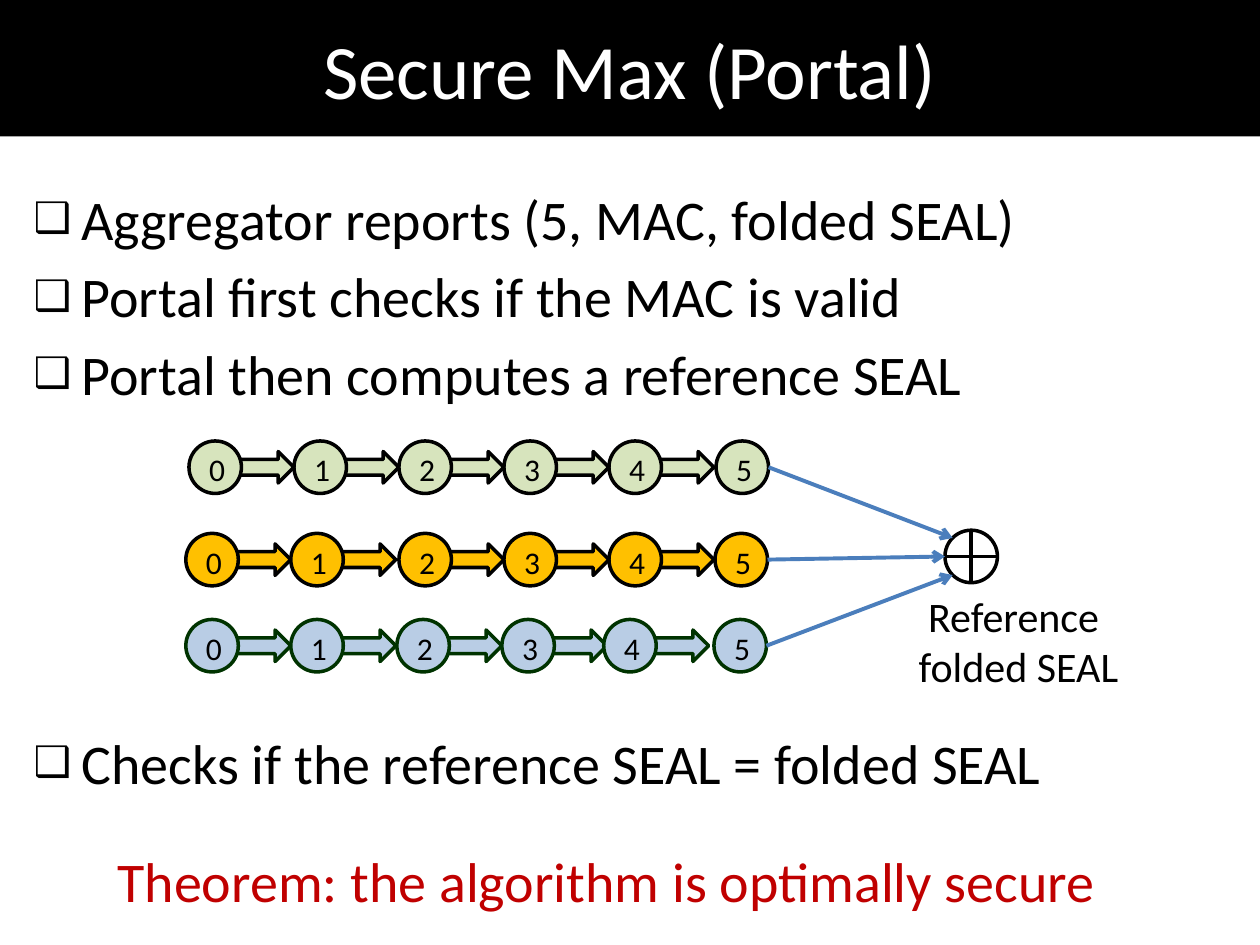
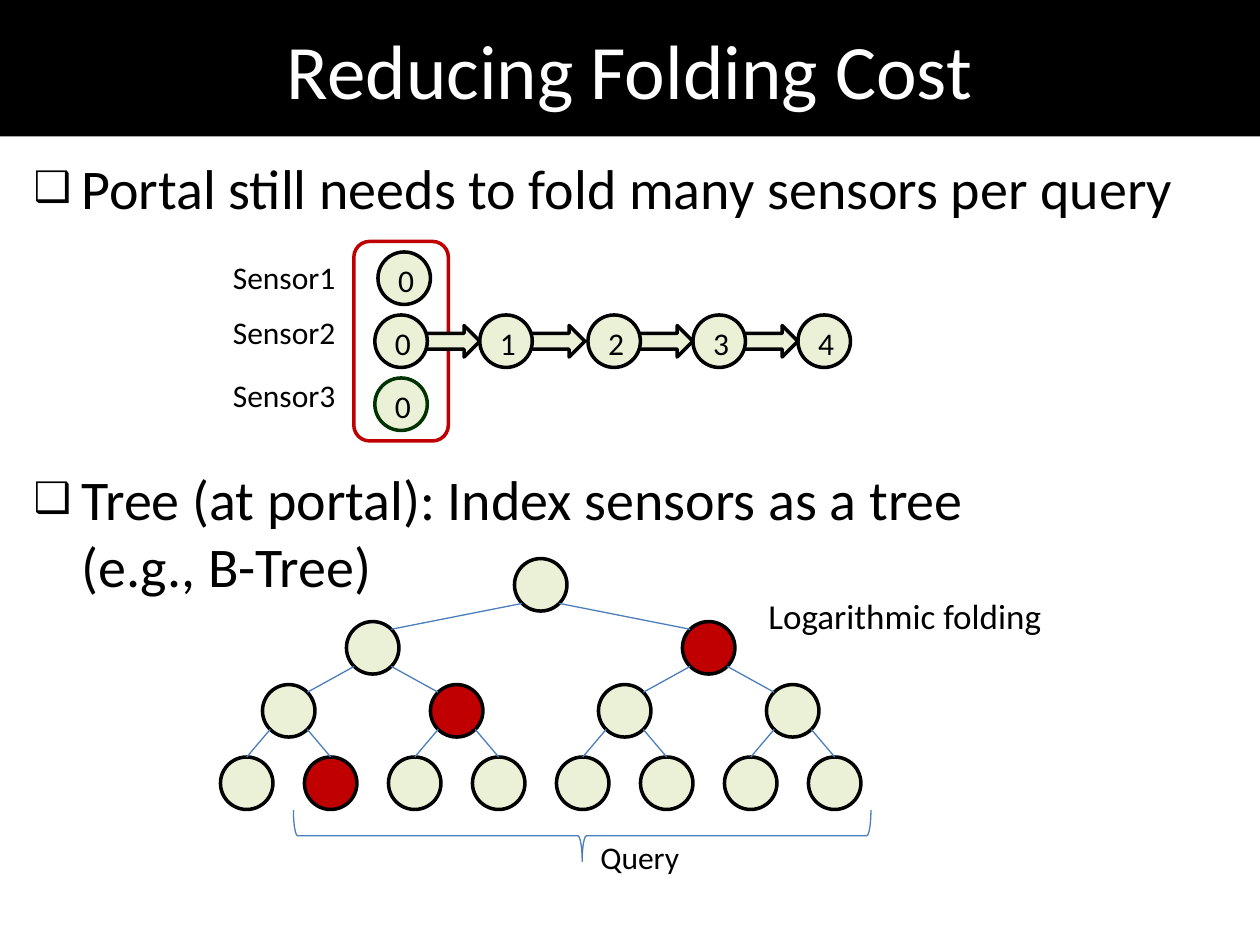
from dataclasses import dataclass
from math import cos, radians, sin

from lxml.etree import SubElement
from pptx import Presentation
from pptx.dml.color import RGBColor
from pptx.enum.shapes import MSO_CONNECTOR, MSO_SHAPE
from pptx.enum.text import MSO_ANCHOR, MSO_AUTO_SIZE, PP_ALIGN
from pptx.oxml.ns import qn
from pptx.util import Inches, Pt

FONT = "Calibri"
COLORS = {
    "black": "000000", "white": "FFFFFF", "red": "C00000", "green": "D7E4BD",
    "orange": "FFC000", "blue": "B9CDE5", "pale": "EAF1D7",
    "forest": "003300", "link": "4B7EBC",
}
COLS, ROWS = 120, 90
NODE = 5
GAP = 5.7
LEAVES_DEPTH = 3


@dataclass(frozen=True)
class Chain:
    """A row of numbered nodes joined by block arrows."""
    cols: tuple[float, ...]
    row: float
    fill: str
    line: str = "black"


@dataclass(frozen=True)
class Bullet:
    """A list item with the space above it in points."""
    text: str
    before: float = GAP


@dataclass(frozen=True)
class Label:
    """A free text with its cell, size and format."""
    text: str
    col: float
    row: float
    width: float
    height: float
    size: int = 18
    color: str = "black"
    align: PP_ALIGN = PP_ALIGN.LEFT


CHAINS = (
    Chain((18, 28, 38, 48, 58, 68.2), 42, "green"),
    Chain((17.7, 27.7, 38, 48, 58, 68.1), 50.8, "orange"),
    Chain((17.7, 27.7, 37.8, 47.8, 57.5, 68), 59, "blue", "forest"),
)
SENSOR_CHAIN = Chain((35.7, 45.7, 56, 66, 76), 30, "pale")
TREE_ROWS = (53.2, 59.2, 65.2, 72.1)
FOLDED = {(1, 1), (2, 1), (3, 1)}


def rgb(name: str) -> RGBColor:
    """Look up a named colour."""
    return RGBColor.from_string(COLORS[name])


def cell(col: float, row: float) -> tuple[int, int]:
    """Turn grid columns and rows into slide lengths."""
    return Inches(10 * col / COLS), Inches(7.5 * row / ROWS)


def rim(col: float, row: float, angle: float) -> tuple[float, float]:
    """Give the point on a node's edge at an angle, clockwise from the right."""
    r = NODE / 2
    return col + r + r * cos(radians(angle)), row + r + r * sin(radians(angle))


def write(p, text: str, *, size=18, color="black", align=PP_ALIGN.LEFT, before=0) -> None:
    """Fill a paragraph with formatted text."""
    p.text = text
    p.alignment = align
    p.space_before = Pt(before)
    for r in p.runs:
        r.font.name, r.font.size, r.font.color.rgb = FONT, Pt(size), rgb(color)


def place(sp, col: float, row: float, width: float, height: float) -> None:
    """Move and size a shape on the grid."""
    sp.left, sp.top = cell(col, row)
    sp.width, sp.height = cell(width, height)


def shape(s, kind, col, row, width, height, *, fill="", line="black", weight=2.0):
    """Draw a preset shape, hollow when no fill is named."""
    sp = s.shapes.add_shape(kind, *cell(col, row), *cell(width, height))
    sp.shadow.inherit = False
    if fill:
        sp.fill.solid()
        sp.fill.fore_color.rgb = rgb(fill)
    else:
        sp.fill.background()
    sp.line.color.rgb, sp.line.width = rgb(line), Pt(weight)
    return sp


def node(s, col: float, row: float, fill: str, line="black", text="") -> None:
    """Draw a round node with an optional number."""
    sp = shape(s, MSO_SHAPE.OVAL, col, row, NODE, NODE, fill=fill, line=line)
    if text:
        tf = sp.text_frame
        tf.margin_left, tf.margin_top = Inches(0.03), Inches(0.03)
        tf.margin_right = tf.margin_bottom = 0
        tf.word_wrap = False
        tf.vertical_anchor = MSO_ANCHOR.MIDDLE
        write(tf.paragraphs[0], text, align=PP_ALIGN.CENTER)


def chain(s, c: Chain) -> None:
    """Draw a chain of nodes counted from zero."""
    for i, col in enumerate(c.cols):
        if i < len(c.cols) - 1:
            shape(s, MSO_SHAPE.RIGHT_ARROW, col + 4, c.row + 1, 6, 3, fill=c.fill, line=c.line)
        node(s, col, c.row, c.fill, c.line, str(i))


def link(s, start, end, *, weight=0.75, arrow=False) -> None:
    """Join two grid points with a line or an arrow."""
    cx = s.shapes.add_connector(MSO_CONNECTOR.STRAIGHT, *cell(*start), *cell(*end))
    cx.line.color.rgb, cx.line.width = rgb("link"), Pt(weight)
    if arrow:
        SubElement(cx.line._get_or_add_ln(), qn("a:tailEnd"), type="arrow")
    SubElement(cx._element.spPr, qn("a:effectLst"))


def label(s, t: Label) -> None:
    """Add a free text on one or more fixed lines."""
    tf = s.shapes.add_textbox(*cell(t.col, t.row), *cell(t.width, t.height)).text_frame
    tf.word_wrap = False
    tf.auto_size = MSO_AUTO_SIZE.SHAPE_TO_FIT_TEXT
    write(tf.paragraphs[0], t.text, size=t.size, color=t.color, align=t.align)


def add_bullet(p) -> None:
    """Give a paragraph a hanging box bullet."""
    pPr = p._p.get_or_add_pPr()
    pPr.set("marL", str(Inches(0.38)))
    pPr.set("indent", str(-Inches(0.38)))
    SubElement(SubElement(pPr, qn("a:buClr")), qn("a:srgbClr"), val=COLORS["black"])
    SubElement(pPr, qn("a:buSzPct"), val="75000")
    SubElement(pPr, qn("a:buChar"), char="❑")


def new_slide(prs, title: str, body_row: float, bullets: tuple[Bullet, ...]):
    """Add a slide with the title band and the bullet list."""
    s = prs.slides.add_slide(prs.slide_layouts[1])
    band, body = s.shapes.title, s.placeholders[1]
    place(band, 0, 0, COLS, 13)
    band.fill.solid()
    band.fill.fore_color.rgb = rgb("black")
    band.text_frame.vertical_anchor = MSO_ANCHOR.MIDDLE
    write(band.text_frame.paragraphs[0], title, size=44, color="white", align=PP_ALIGN.CENTER)
    place(body, 2, body_row, 115, 65)
    tf = body.text_frame
    tf.auto_size = MSO_AUTO_SIZE.NONE
    for i, b in enumerate(bullets):
        p = tf.add_paragraph() if i else tf.paragraphs[0]
        write(p, b.text, size=32, before=b.before)
        add_bullet(p)
    return s


def portal_slide(prs) -> None:
    """Build the slide on the portal's check."""
    s = new_slide(prs, "Secure Max (Portal)", 17, (
        Bullet("Aggregator reports (5, MAC, folded SEAL)"),
        Bullet("Portal first checks if the MAC is valid"),
        Bullet("Portal then computes a reference SEAL"),
        Bullet("Checks if the reference SEAL = folded SEAL", 184.3),
    ))
    fold = (90, 50.5)
    shape(s, MSO_SHAPE.FLOWCHART_OR, *fold, NODE, NODE)
    for c, angle in zip(CHAINS, (225, 180, 135)):
        chain(s, c)
        link(s, rim(c.cols[-1], c.row, 0), rim(*fold, angle), weight=2.25, arrow=True)
    label(s, Label("Reference \nfolded SEAL", 86.2, 55.6, 21.6, 10.9, 24, align=PP_ALIGN.CENTER))
    label(s, Label("Theorem: the algorithm is optimally secure", 10, 80, 96.6, 7.7, 32, "red"))


def tree(s) -> None:
    """Draw the binary tree of sensors with its folded nodes."""
    def left(depth: int, i: int) -> float:
        """Centre a node over the leaves it covers."""
        span = 2 ** (LEAVES_DEPTH - depth)
        return 21 + 8 * (span * i + (span - 1) / 2)

    for depth, row in enumerate(TREE_ROWS):
        for i in range(2 ** depth):
            node(s, left(depth, i), row, "red" if (depth, i) in FOLDED else "pale")
            if depth:
                out, into = (45, 225) if i % 2 else (135, 315)
                into = 270 if depth == LEAVES_DEPTH else into
                parent = rim(left(depth - 1, i // 2), TREE_ROWS[depth - 1], out)
                link(s, parent, rim(left(depth, i), row, into))


def folding_slide(prs) -> None:
    """Build the slide on cheaper folding."""
    s = new_slide(prs, "Reducing Folding Cost", 14, (
        Bullet("Portal still needs to fold many sensors per query"),
        Bullet("Tree (at portal): Index sensors as a tree \n(e.g., B-Tree)", 139.2),
    ))
    shape(s, MSO_SHAPE.ROUNDED_RECTANGLE, 33.7, 23, 9, 19, line="red")
    node(s, 35.7, 36, "pale", "forest", "0")
    node(s, 36, 24, "pale", text="0")
    chain(s, SENSOR_CHAIN)
    for i, row in enumerate((24, 29.2, 35.2), 1):
        label(s, Label(f"Sensor{i}", 21, row, 12.2, 4.8))
    tree(s)
    brace = shape(s, MSO_SHAPE.LEFT_BRACE, 53, 52.1, 4.9, 55, line="link", weight=0.75)
    brace.rotation = 270
    label(s, Label("Query", 56, 79.2, 10, 4.8))
    label(s, Label("Logarithmic folding", 72, 56, 31, 5.3, 20))


def main() -> None:
    """Build and save the slides."""
    prs = Presentation()
    prs.slide_width, prs.slide_height = Inches(10), Inches(7.5)
    portal_slide(prs)
    folding_slide(prs)
    prs.save("out.pptx")


if __name__ == "__main__":
    main()
